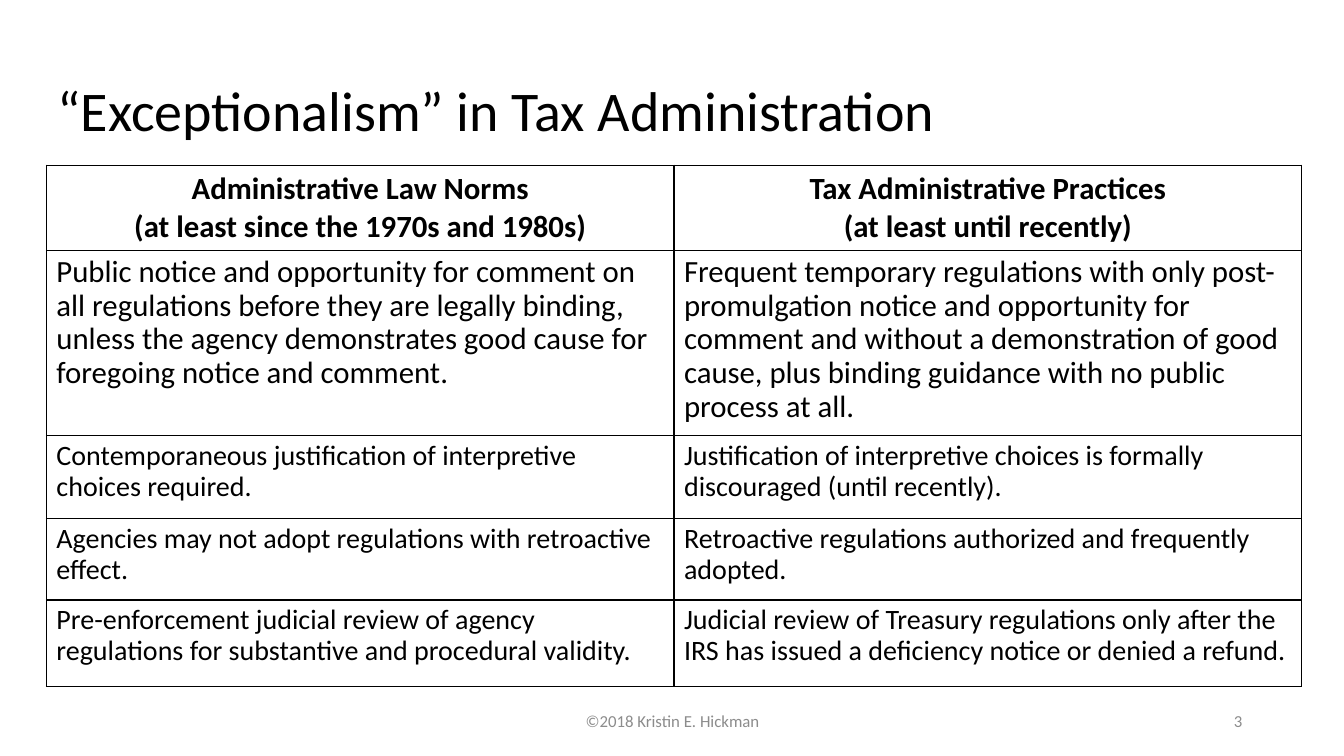
from dataclasses import dataclass

from lxml.etree import SubElement as Sub
from pptx import Presentation
from pptx.dml.color import RGBColor as Rgb
from pptx.enum.text import MSO_ANCHOR as Anchor, MSO_AUTO_SIZE as Auto, PP_ALIGN as Align
from pptx.oxml.ns import qn
from pptx.slide import Slide
from pptx.table import _Cell as Cell
from pptx.text.text import TextFrame as Frame
from pptx.util import Inches, Pt

WIDE = Inches(13.33)
HIGH = Inches(7.5)


@dataclass(frozen=True)
class Theme:
    font: str = "Calibri"
    ink: str = "000000"
    gray: str = "8C8C8C"
    title: int = 40
    head: int = 22
    body: int = 20
    note: int = 12
    rule: float = 1
    tight: float = 0.9


@dataclass(frozen=True)
class Box:
    left: float
    top: float
    width: float
    height: float

    def lengths(self) -> tuple[int, int, int, int]:
        return (across(self.left), down(self.top),
                across(self.width), down(self.height))


@dataclass(frozen=True)
class Style:
    size: int
    color: str
    align: Align = Align.LEFT
    bold: bool = False
    lead: float = 1.0


@dataclass(frozen=True)
class Row:
    height: float
    style: Style
    anchor: Anchor
    cells: tuple[tuple[str, ...], ...]


@dataclass(frozen=True)
class Note:
    box: Box
    text: str
    align: Align


LOOK = Theme()
TITLE = Style(LOOK.title, LOOK.ink, lead=LOOK.tight)
HEAD = Style(LOOK.head, LOOK.ink, Align.CENTER, bold=True)
LARGE = Style(LOOK.head, LOOK.ink, lead=LOOK.tight)
BODY = Style(LOOK.body, LOOK.ink, lead=LOOK.tight)

TITLE_BOX = Box(3.53, 5.33, 89.57, 19.33)
TABLE_BOX = Box(3.45, 21.87, 93.4, 68.66)

ROWS = (
    Row(10.93, HEAD, Anchor.MIDDLE, (
        ("Administrative Law Norms", "(at least since the 1970s and 1980s)"),
        ("Tax Administrative Practices", "(at least until recently)"))),
    Row(24.53, LARGE, Anchor.TOP, (
        ("Public notice and opportunity for comment on all regulations before they are "
         "legally binding, unless the agency demonstrates good cause for foregoing "
         "notice and comment.",),
        ("Frequent temporary regulations with only post-promulgation notice and "
         "opportunity for comment and without a demonstration of good cause, plus "
         "binding guidance with no public process at all.",))),
    Row(10.93, BODY, Anchor.TOP, (
        ("Contemporaneous justification of interpretive choices required.",),
        ("Justification of interpretive choices is formally discouraged "
         "(until recently).",))),
    Row(10.8, BODY, Anchor.TOP, (
        ("Agencies may not adopt regulations with retroactive effect.",),
        ("Retroactive regulations authorized and frequently adopted.",))),
    Row(11.47, BODY, Anchor.TOP, (
        ("Pre-enforcement judicial review of agency regulations for substantive and "
         "procedural validity.",),
        ("Judicial review of Treasury regulations only after the IRS has issued a "
         "deficiency notice or denied a refund.",))),
)

NOTES = (
    Note(Box(33.16, 92.67, 33.76, 5.33), "©2018 Kristin E. Hickman", Align.CENTER),
    Note(Box(70.67, 92.67, 22.5, 5.33), "3", Align.RIGHT),
)


def across(share: float) -> int:
    return round(WIDE * share / 100)


def down(share: float) -> int:
    return round(HIGH * share / 100)


def write(frame: Frame, lines: tuple[str, ...], style: Style) -> None:
    frame.word_wrap = True
    for i, line in enumerate(lines):
        para = frame.add_paragraph() if i else frame.paragraphs[0]
        para.alignment = style.align
        para.line_spacing = style.lead
        run = para.add_run()
        run.text = line
        run.font.name = LOOK.font
        run.font.size = Pt(style.size)
        run.font.bold = style.bold
        run.font.color.rgb = Rgb.from_string(style.color)


def border(cell: Cell) -> None:
    props = cell._tc.get_or_add_tcPr()
    for side in ("a:lnL", "a:lnR", "a:lnT", "a:lnB"):
        line = Sub(props, qn(side), w=str(Pt(LOOK.rule)))
        fill = Sub(line, qn("a:solidFill"))
        Sub(fill, qn("a:srgbClr"), val=LOOK.ink)


def add_title(slide: Slide) -> None:
    title = slide.shapes.title
    title.left, title.top, title.width, title.height = TITLE_BOX.lengths()
    frame = title.text_frame
    frame.auto_size = Auto.NONE
    frame.vertical_anchor = Anchor.MIDDLE
    write(frame, ("“Exceptionalism” in Tax Administration",), TITLE)


def add_grid(slide: Slide) -> None:
    count = len(ROWS[0].cells)
    table = slide.shapes.add_table(len(ROWS), count, *TABLE_BOX.lengths()).table
    table.first_row = table.horz_banding = False
    for col in table.columns:
        col.width = across(TABLE_BOX.width / count)
    for r, row in enumerate(ROWS):
        table.rows[r].height = down(row.height)
        for c, lines in enumerate(row.cells):
            cell = table.cell(r, c)
            border(cell)
            cell.fill.background()
            cell.vertical_anchor = row.anchor
            write(cell.text_frame, lines, row.style)


def add_note(slide: Slide, note: Note) -> None:
    frame = slide.shapes.add_textbox(*note.box.lengths()).text_frame
    frame.vertical_anchor = Anchor.MIDDLE
    write(frame, (note.text,), Style(LOOK.note, LOOK.gray, note.align))


def main() -> None:
    deck = Presentation()
    deck.slide_width, deck.slide_height = WIDE, HIGH
    slide = deck.slides.add_slide(deck.slide_layouts.get_by_name("Title Only"))
    add_title(slide)
    add_grid(slide)
    for note in NOTES:
        add_note(slide, note)
    deck.save("out.pptx")


if __name__ == "__main__":
    main()
